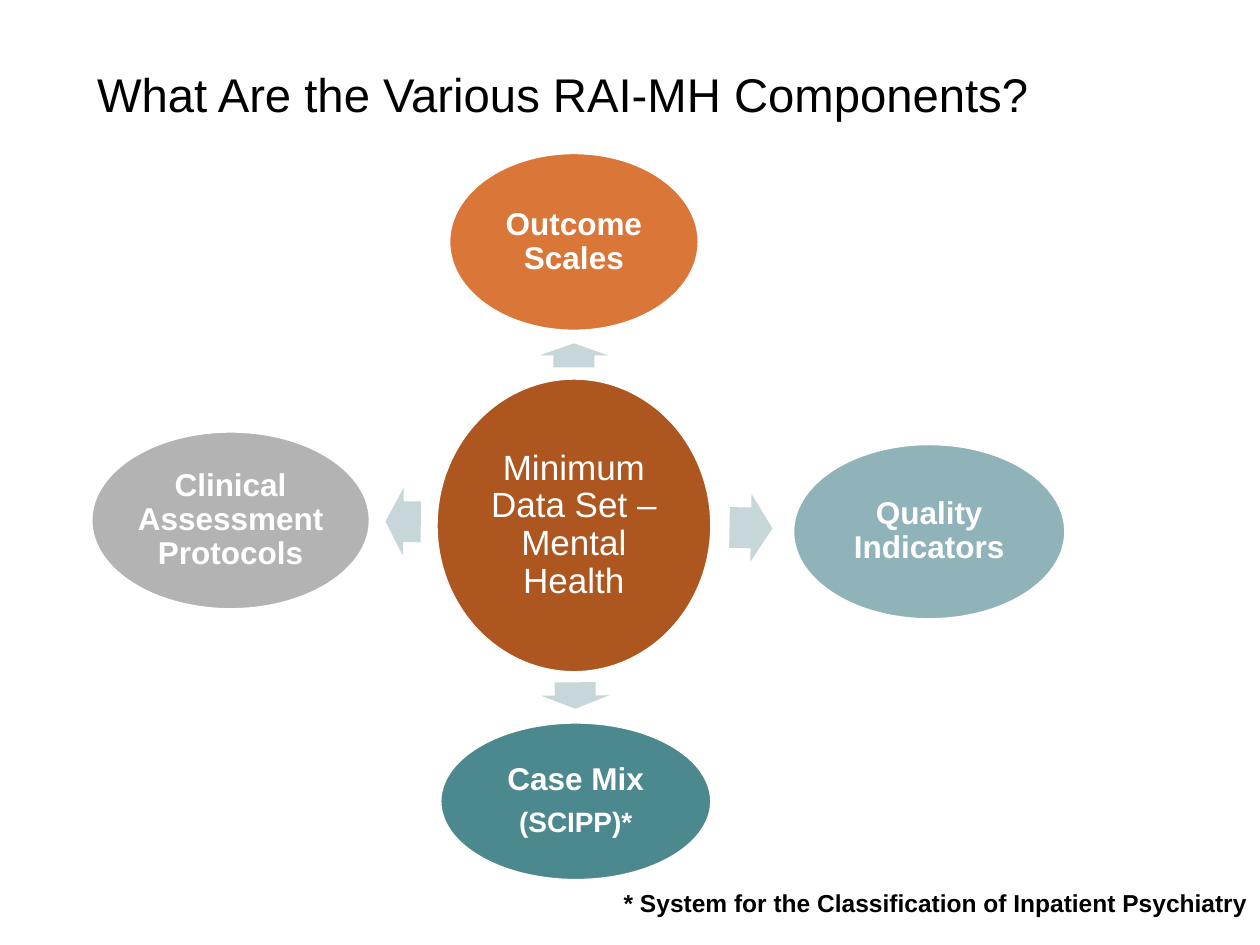
from pptx import Presentation
from pptx.dml.color import RGBColor
from pptx.enum.shapes import MSO_SHAPE
from pptx.enum.text import MSO_ANCHOR, MSO_AUTO_SIZE, PP_ALIGN
from pptx.util import Inches, Pt

BLACK = RGBColor(0x00, 0x00, 0x00)
WHITE = RGBColor(0xFF, 0xFF, 0xFF)
RUST = RGBColor(0xAD, 0x56, 0x20)
ORANGE = RGBColor(0xDA, 0x76, 0x37)
LIGHT_TEAL = RGBColor(0x8F, 0xB3, 0xB9)
TEAL = RGBColor(0x4C, 0x89, 0x8E)
GREY = RGBColor(0xB3, 0xB3, 0xB3)
PALE_BLUE = RGBColor(0xC6, 0xD6, 0xD9)

FONT = "Arial"
ARROW_WIDTH = 0.54

# Left, top, width, height; fill; lines of (text, size, bold)
ELLIPSES = [
    ((3.46, 3.0, 2.19, 2.34), RUST, [("Minimum Data Set – Mental Health", 20, False)]),
    ((3.56, 1.21, 1.99, 1.42), ORANGE, [("Outcome Scales", 18, True)]),
    ((6.29, 3.52, 2.17, 1.4), LIGHT_TEAL, [("Quality Indicators", 18, True)]),
    ((3.49, 5.73, 2.16, 1.26), TEAL, [("Case Mix", 18, True), ("(SCIPP)*", 16, True)]),
    ((0.72, 3.42, 2.22, 1.42), GREY, [("Clinical Assessment Protocols", 18, True)]),
]

# Left, top, length, rotation
ARROWS = [
    (4.46, 2.55, 0.19, 270),
    (5.79, 3.92, 0.34, 1),
    (4.46, 5.25, 0.21, 89.6),
    (3.06, 3.87, 0.28, 180.8),
]


def style_text(paragraph, size, color, bold, alignment):
    paragraph.alignment = alignment
    for span in paragraph.runs:
        span.font.name = FONT
        span.font.size = Pt(size)
        span.font.bold = bold
        span.font.color.rgb = color


def add_title(page, text):
    title = page.shapes.title
    title.left, title.top = Inches(0.67), Inches(0.33)
    title.width, title.height = Inches(8.35), Inches(0.83)
    frame = title.text_frame
    frame.text = text
    frame.vertical_anchor = MSO_ANCHOR.MIDDLE
    style_text(frame.paragraphs[0], 27, BLACK, False, PP_ALIGN.LEFT)


def add_ellipse(page, bounds, fill, lines):
    ellipse = page.shapes.add_shape(MSO_SHAPE.OVAL, *map(Inches, bounds))
    ellipse.shadow.inherit = False
    ellipse.fill.solid()
    ellipse.fill.fore_color.rgb = fill
    ellipse.line.color.rgb = WHITE
    ellipse.line.width = Pt(2)

    frame = ellipse.text_frame
    frame.word_wrap = True
    frame.vertical_anchor = MSO_ANCHOR.MIDDLE
    frame.margin_left = frame.margin_right = Inches(0.03)
    frame.margin_top = frame.margin_bottom = Inches(0.03)
    frame.text = "\n".join(text for text, _, _ in lines)
    for paragraph, (_, size, bold) in zip(frame.paragraphs, lines):
        style_text(paragraph, size, WHITE, bold, PP_ALIGN.CENTER)
        paragraph.line_spacing = 0.9
        paragraph.space_after = Pt(0.35 * size)


def add_arrow(page, left, top, length, rotation):
    arrow = page.shapes.add_shape(
        MSO_SHAPE.RIGHT_ARROW,
        Inches(left), Inches(top), Inches(length), Inches(ARROW_WIDTH),
    )
    arrow.adjustments[0] = 0.6
    arrow.adjustments[1] = 0.5
    arrow.rotation = rotation
    arrow.shadow.inherit = False
    arrow.fill.solid()
    arrow.fill.fore_color.rgb = PALE_BLUE
    arrow.line.fill.background()


def add_footnote(page, text):
    box = page.shapes.add_textbox(Inches(3.33), Inches(7), Inches(6.67), Inches(0.34))
    frame = box.text_frame
    frame.word_wrap = True
    frame.auto_size = MSO_AUTO_SIZE.SHAPE_TO_FIT_TEXT
    frame.text = text
    style_text(frame.paragraphs[0], 14, BLACK, True, PP_ALIGN.RIGHT)


def main():
    deck = Presentation()
    deck.slide_width, deck.slide_height = Inches(10), Inches(7.5)
    page = deck.slides.add_slide(deck.slide_layouts[5])

    add_title(page, "What Are the Various RAI-MH Components?")
    for bounds, fill, lines in ELLIPSES:
        add_ellipse(page, bounds, fill, lines)
    for arrow in ARROWS:
        add_arrow(page, *arrow)
    add_footnote(page, "* System for the Classification of Inpatient Psychiatry")

    deck.save("out.pptx")


if __name__ == "__main__":
    main()
